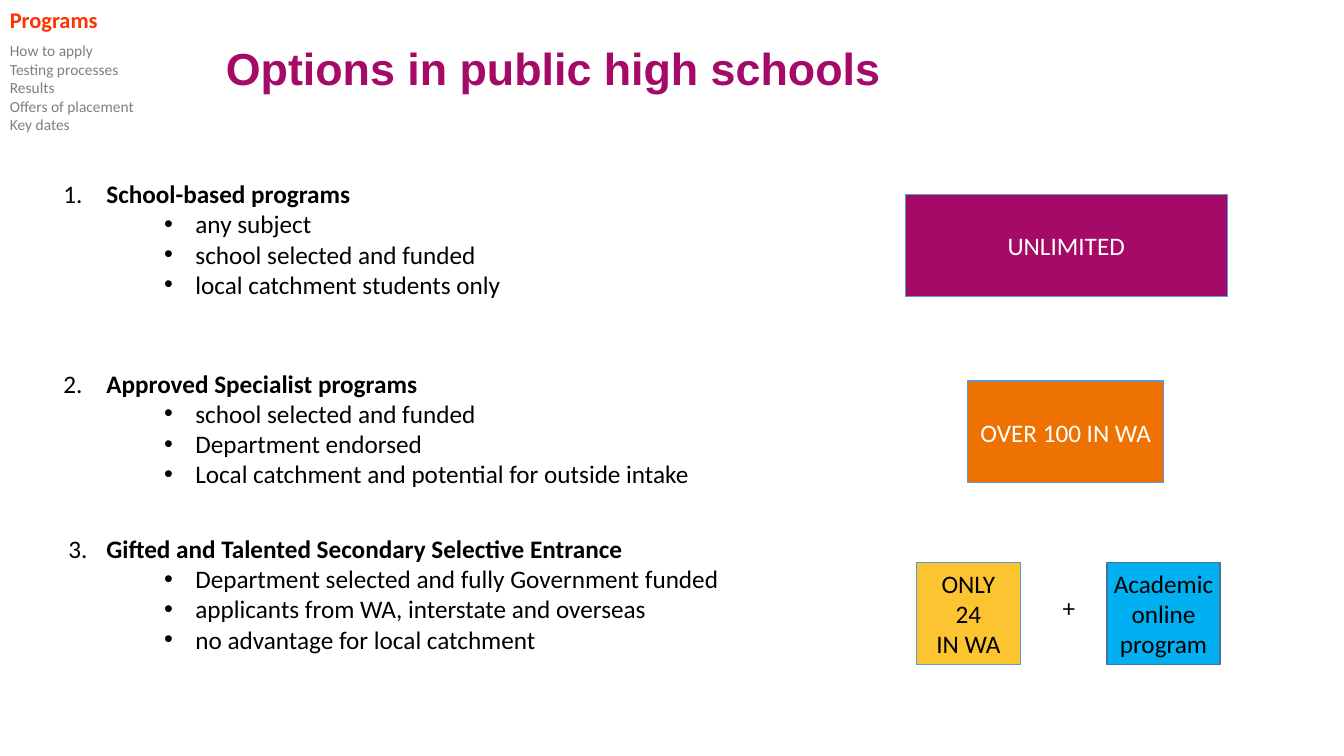
from pptx import Presentation
from pptx.dml.color import RGBColor
from pptx.enum.shapes import MSO_SHAPE
from pptx.enum.text import MSO_ANCHOR, PP_ALIGN
from pptx.oxml.ns import qn
from pptx.util import Inches, Pt
from lxml.etree import SubElement

COLORS = {
    "plum": "A40A66", "orange": "EE7202", "yellow": "FDC432", "sky": "00B0F0",
    "edge": "5B9BD5", "dark_edge": "43739E", "red": "FF3300", "grey": "7F7F7F",
    "black": "000000", "white": "FFFFFF",
}


class SlideBuilder:
    body_font = "Calibri"
    title_font = "Arial"
    body_size = 18

    def __init__(self, slide):
        self.slide = slide

    def color(self, name):
        return RGBColor.from_string(COLORS[name])

    def run(self, paragraph, text, color="black", size=body_size, bold=False, font=body_font):
        run = paragraph.add_run()
        run.text = text
        run.font.name = font
        run.font.size = Pt(size)
        run.font.bold = bold
        run.font.color.rgb = self.color(color)

    def paragraph(self, frame, index):
        return frame.add_paragraph() if index else frame.paragraphs[0]

    def margins(self, frame, inset):
        frame.margin_left = frame.margin_right = Inches(inset)
        frame.margin_top = frame.margin_bottom = Inches(inset)

    def text_box(self, left, top, width, height, wrap=True):
        box = self.slide.shapes.add_textbox(Inches(left), Inches(top), Inches(width), Inches(height))
        box.text_frame.word_wrap = wrap
        return box.text_frame

    def marker(self, paragraph, margin, indent, tag, **attributes):
        properties = paragraph._p.get_or_add_pPr()
        properties.set("marL", str(Inches(margin)))
        properties.set("indent", str(Inches(indent)))
        SubElement(properties, qn("a:buFont"), typeface="Arial")
        SubElement(properties, qn(tag), **attributes)

    def title(self, text):
        frame = self.text_box(2.24, 0.46, 9.15, 0.96)
        self.margins(frame, 0)
        heading = frame.paragraphs[0]
        heading.line_spacing = 0.9
        self.run(heading, text, "plum", 32, True, self.title_font)

    def agenda(self, current, upcoming):
        frame = self.text_box(0, 0.01, 1.66, 1.45)
        heading = frame.paragraphs[0]
        heading.space_after = Pt(6)
        self.run(heading, current, "red", 16, True)
        for topic in upcoming:
            self.run(frame.add_paragraph(), topic, "grey", 11)

    def option(self, number, top, width, hanging, heading, features):
        frame = self.text_box(0.53, top, width, 1.31)
        first = frame.paragraphs[0]
        self.marker(first, 0.37, -hanging, "a:buAutoNum", type="arabicPeriod", startAt=str(number))
        self.run(first, " ")
        self.run(first, heading, bold=True)
        for feature in features:
            line = frame.add_paragraph()
            line.level = 1
            self.marker(line, 1.31, -0.31, "a:buChar", char="•")
            self.run(line, feature)

    def tile(self, left, top, width, lines, fill, text_color, edge="edge", edge_width=0.75):
        tile = self.slide.shapes.add_shape(
            MSO_SHAPE.RECTANGLE, Inches(left), Inches(top), Inches(width), Inches(1.01))
        tile.shadow.inherit = False
        tile.fill.solid()
        tile.fill.fore_color.rgb = self.color(fill)
        tile.line.color.rgb = self.color(edge)
        tile.line.width = Pt(edge_width)
        frame = tile.text_frame
        frame.word_wrap = True
        frame.vertical_anchor = MSO_ANCHOR.MIDDLE
        self.margins(frame, 0.04)
        for index, text in enumerate(lines):
            line = self.paragraph(frame, index)
            line.alignment = PP_ALIGN.CENTER
            self.run(line, text, text_color)

    def plus(self):
        frame = self.text_box(10.44, 5.83, 0.33, 0.4, wrap=False)
        self.run(frame.paragraphs[0], "+")


def main():
    presentation = Presentation()
    presentation.slide_width = Inches(13.33)
    presentation.slide_height = Inches(7.5)
    builder = SlideBuilder(presentation.slides.add_slide(presentation.slide_layouts[6]))

    builder.title("Options in public high schools")
    builder.agenda("Programs", [
        "How to apply", "Testing processes", "Results", "Offers of placement", "Key dates"])

    options = [
        (1.72, 7.75, 0.37, "School-based programs",
         ["any subject", "school selected and funded", "local catchment students only"]),
        (3.6, 9, 0.37, "Approved Specialist programs",
         ["school selected and funded", "Department endorsed",
          "Local catchment and potential for outside intake"]),
        (5.24, 8.4, 0.32, "Gifted and Talented Secondary Selective Entrance",
         ["Department selected and fully Government funded",
          "applicants from WA, interstate and overseas", "no advantage for local catchment"]),
    ]
    for number, option in enumerate(options, 1):
        builder.option(number, *option)

    builder.tile(8.98, 1.93, 3.19, ["UNLIMITED"], "plum", "white")
    builder.tile(9.6, 3.78, 1.94, ["OVER 100 IN WA"], "orange", "white")
    builder.tile(9.09, 5.58, 1.03, ["ONLY", "24", "IN WA"], "yellow", "black")
    builder.plus()
    builder.tile(10.98, 5.58, 1.12, ["Academic", "online", "program"], "sky", "black", "dark_edge", 1)

    presentation.save("out.pptx")


if __name__ == "__main__":
    main()
